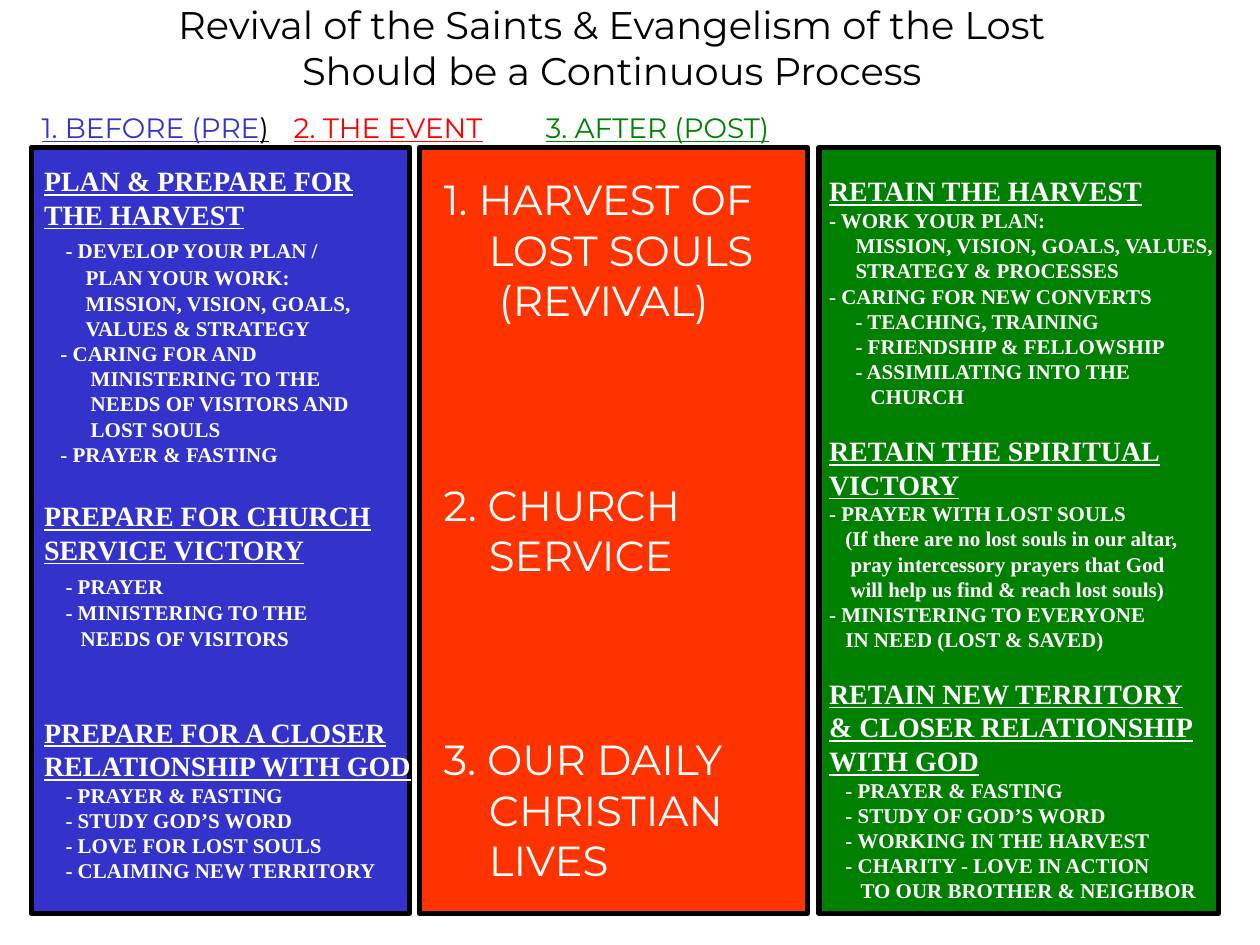
from lxml.etree import SubElement
from pptx import Presentation
from pptx.dml.color import RGBColor
from pptx.enum.shapes import MSO_SHAPE
from pptx.enum.text import MSO_ANCHOR, MSO_AUTO_SIZE, PP_ALIGN
from pptx.oxml.ns import qn
from pptx.util import Inches, Pt

SERIF, SANS = "Times New Roman", "Montserrat"


def add_text(tf, text, size=12, font=SERIF, color="FFFFFF", bold=False, underline=False,
             indent=0, before=0, align=PP_ALIGN.LEFT, same_line=False, tabs=()):
    p = tf.paragraphs[-1]
    if not same_line:
        if p.runs:
            p = tf.add_paragraph()
        p.alignment = align
        p.space_before = Pt(before)
        pPr = p._p.get_or_add_pPr()
        pPr.set("marL", str(Inches(indent)))
        pPr.set("indent", "0")
        SubElement(pPr, qn("a:buNone"))
        if tabs:
            tab_list = SubElement(pPr, qn("a:tabLst"))
            for pos in tabs:
                SubElement(tab_list, qn("a:tab"), pos=str(Inches(pos)), algn="l")
    r = p.add_run()
    r.text = text
    r.font.size, r.font.name = Pt(size), font
    r.font.bold, r.font.underline = bold, underline
    r.font.color.rgb = RGBColor.from_string(color)


def place(sp, left, top, width, height):
    """Move a placeholder, bring it to the front and return its text frame."""
    sp.left, sp.top, sp.width, sp.height = map(Inches, (left, top, width, height))
    sp.element.getparent().append(sp.element)
    tf = sp.text_frame
    tf.auto_size = MSO_AUTO_SIZE.NONE
    tf.vertical_anchor = MSO_ANCHOR.TOP
    tf.word_wrap = True
    tf.margin_left = tf.margin_right = Inches(0.1)
    tf.margin_top = tf.margin_bottom = Inches(0.05)
    return tf


prs = Presentation()
prs.slide_width, prs.slide_height = Inches(10), Inches(7.5)
s = prs.slides.add_slide(prs.slide_layouts[4])
ph = {sp.placeholder_format.idx: sp for sp in s.placeholders if sp.placeholder_format.idx < 5}

# Panels
for left, width, color in [(0.25, 3, "3333CC"), (6.5, 3.17, "008000"), (3.33, 3.08, "FF3300")]:
    sp = s.shapes.add_shape(MSO_SHAPE.RECTANGLE, Inches(left), Inches(1.17),
                            Inches(width), Inches(6.08))
    sp.shadow.inherit = False
    sp.fill.solid()
    sp.fill.fore_color.rgb = RGBColor.from_string(color)
    sp.line.color.rgb = RGBColor.from_string("000000")
    sp.line.width = Pt(3)

# Title and column headings
tf = place(ph[0], 0, 0, 9.71, 0.8)
tf.margin_top = Inches(0.01)
for text in ["Revival of the Saints & Evangelism of the Lost", "Should be a Continuous Process"]:
    add_text(tf, text, size=22, font=SANS, color="000000", align=PP_ALIGN.CENTER)

tf = place(ph[3], 0.23, 0.83, 9.48, 0.36)
for i, (text, color) in enumerate([
    ("1. BEFORE (PRE", "3333CC"), (")", "000000"), ("\t", "000000"),
    ("2. THE EVENT", "FF0000"), ("\t", "000000"), ("3. AFTER (POST)", "008000"),
]):
    add_text(tf, text, size=16, font=SANS, color=color, underline=text != "\t",
             same_line=i > 0, tabs=(2.91, 5.39))

# Outer columns: (text, indent, space before); an indent of None marks a heading
before_event = [
    ("PLAN & PREPARE FOR THE HARVEST", None, 0),
    ("- DEVELOP YOUR PLAN /", 0.17, 4),
    ("PLAN YOUR WORK:", 0.33, 1),
    ("MISSION, VISION, GOALS,", 0.33, 0),
    ("VALUES & STRATEGY", 0.33, 0),
    ("- CARING FOR AND", 0.13, 0),
    ("MINISTERING TO THE", 0.37, 0),
    ("NEEDS OF VISITORS AND", 0.37, 0),
    ("LOST SOULS", 0.37, 0),
    ("- PRAYER & FASTING", 0.13, 0),
    ("PREPARE FOR CHURCH", None, 18.5),
    ("SERVICE VICTORY", None, 0),
    ("- PRAYER", 0.17, 4),
    ("- MINISTERING TO THE", 0.17, 1),
    ("NEEDS OF VISITORS", 0.29, 0),
    ("PREPARE FOR A CLOSER RELATIONSHIP WITH GOD", None, 37),
    ("- PRAYER & FASTING", 0.17, 0),
    ("- STUDY GOD’S WORD", 0.17, 0),
    ("- LOVE FOR LOST SOULS", 0.17, 0),
    ("- CLAIMING NEW TERRITORY", 0.17, 0),
]
after_event = [
    ("RETAIN THE HARVEST", None, 0),
    ("- WORK YOUR PLAN:", 0, 0),
    ("MISSION, VISION, GOALS, VALUES,", 0.21, 0),
    ("STRATEGY & PROCESSES", 0.21, 0),
    ("- CARING FOR NEW CONVERTS", 0, 0),
    ("- TEACHING, TRAINING", 0.21, 0),
    ("- FRIENDSHIP & FELLOWSHIP", 0.21, 0),
    ("- ASSIMILATING INTO THE", 0.21, 0),
    ("CHURCH", 0.33, 0),
    ("RETAIN THE SPIRITUAL", None, 14),
    ("VICTORY", None, 0),
    ("- PRAYER WITH LOST SOULS", 0, 0),
    ("(If there are no lost souls in our altar,", 0.13, 0),
    ("pray intercessory prayers that God", 0.17, 0),
    ("will help us find & reach lost souls)", 0.17, 0),
    ("- MINISTERING TO EVERYONE", 0, 0),
    ("IN NEED (LOST & SAVED)", 0.13, 0),
    ("RETAIN NEW TERRITORY", None, 14),
    ("& CLOSER RELATIONSHIP", None, 0),
    ("WITH GOD", None, 0),
    ("- PRAYER & FASTING", 0.13, 0),
    ("- STUDY OF GOD’S WORD", 0.13, 0),
    ("- WORKING IN THE HARVEST", 0.13, 0),
    ("- CHARITY - LOVE IN ACTION", 0.13, 0),
    ("TO OUR BROTHER & NEIGHBOR", 0.25, 0),
]
for idx, box, lines in [(2, (0.25, 1.25, 3.15, 5.89), before_event),
                        (4, (6.48, 1.33, 3.27, 6.16), after_event)]:
    tf = place(ph[idx], *box)
    for text, indent, before in lines:
        heading = indent is None
        add_text(tf, text, size=16 if heading else 12, bold=True, underline=heading,
                 indent=indent or 0, before=before)

# Middle column
tf = place(ph[1], 3.42, 1.33, 3.06, 5.9)
for text, indent, before in [
    ("1. HARVEST OF", 0, 0), ("LOST SOULS", 0.36, 0), ("(REVIVAL)", 0.44, 0),
    ("2. CHURCH", 0, 88), ("SERVICE", 0.36, 0),
    ("3. OUR DAILY", 0, 88), ("CHRISTIAN", 0.36, 0), ("LIVES", 0.36, 0),
]:
    add_text(tf, text, size=24, font=SANS, indent=indent, before=before)

prs.save("out.pptx")
